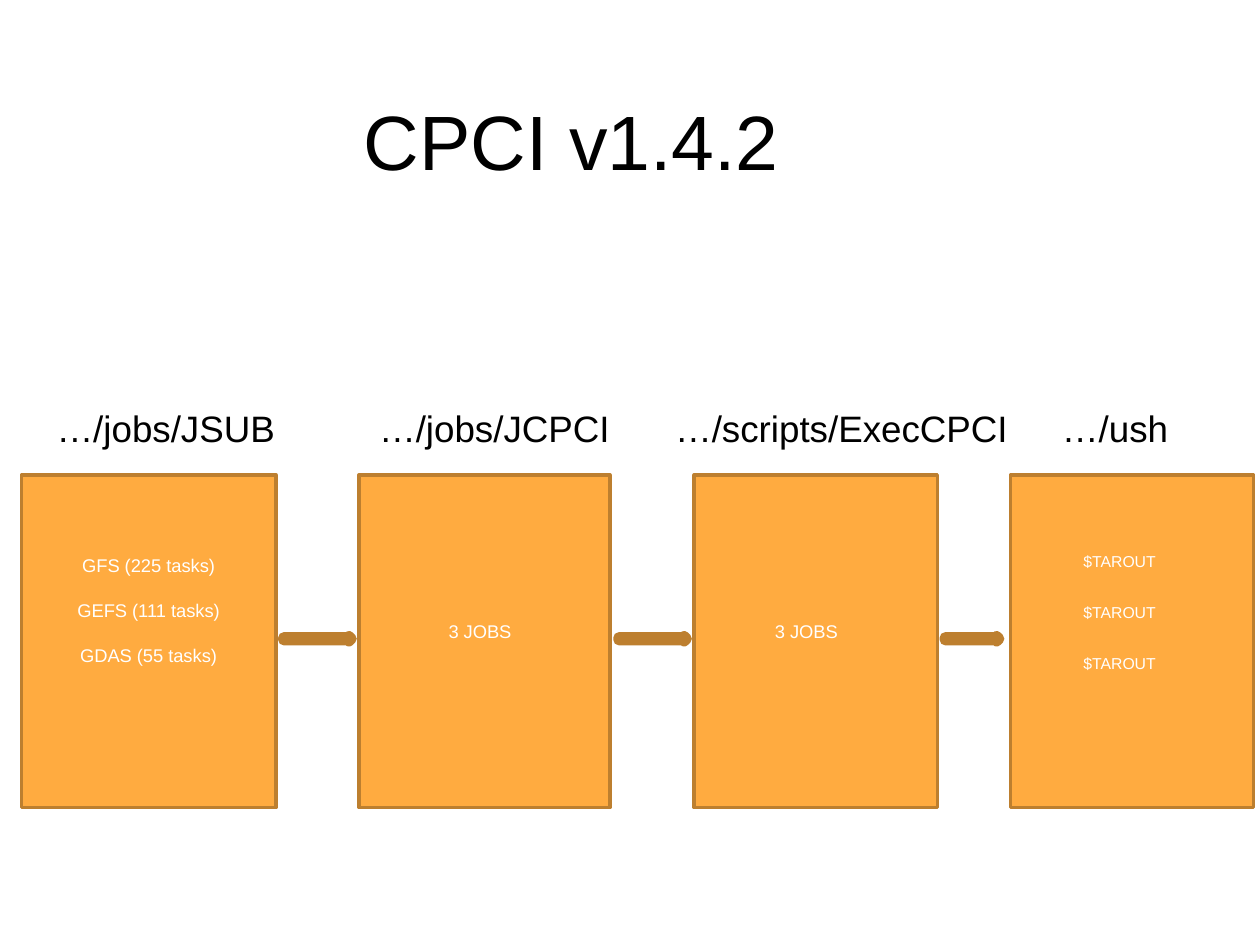
from dataclasses import dataclass

from pptx import Presentation
from pptx import util as u
from pptx.dml.color import RGBColor
from pptx.enum import shapes, text


@dataclass
class Theme:
    font: str = "Arial"
    orange: RGBColor = RGBColor(0xFF, 0xAB, 0x40)
    brown: RGBColor = RGBColor(0xBD, 0x7F, 0x2F)
    black: RGBColor = RGBColor(0, 0, 0)
    white: RGBColor = RGBColor(255, 255, 255)
    title: float = 44
    heading: float = 21
    body: float = 10.5
    small: float = 9


theme = Theme()
presentation = Presentation()
presentation.slide_width = u.Inches(10)
presentation.slide_height = u.Inches(7.5)
slide = presentation.slides.add_slide(presentation.slide_layouts[6])


def add_block(kind, left, top, width, height, line_width):
    shape = slide.shapes.add_shape(
        kind, u.Inches(left), u.Inches(top), u.Inches(width), u.Inches(height)
    )
    shape.shadow.inherit = False
    shape.fill.solid()
    shape.fill.fore_color.rgb = theme.orange
    shape.line.color.rgb = theme.brown
    shape.line.width = u.Pt(line_width)
    return shape


def add_label(wording, left, top, width, height, size, color):
    label = slide.shapes.add_textbox(
        u.Inches(left), u.Inches(top), u.Inches(width), u.Inches(height)
    )
    frame = label.text_frame
    frame.text = wording
    frame.word_wrap = False
    frame.auto_size = text.MSO_AUTO_SIZE.SHAPE_TO_FIT_TEXT
    font = frame.paragraphs[0].runs[0].font
    font.name = theme.font
    font.size = u.Pt(size)
    font.color.rgb = color
    return label


add_label("CPCI v1.4.2", 2.79, 0.69, 3.53, 0.84, theme.title, theme.black)

stages = [
    ("…/jobs/JSUB", 0.35, 1.95, 0.17, 2.02),
    ("…/jobs/JCPCI", 2.91, 2.05, 2.85, 1.99),
    ("…/scripts/ExecCPCI", 5.26, 2.87, 5.51, 1.93),
    ("…/ush", 8.33, 1.05, 8.02, 1.93),
]
boxes = []
for heading, heading_left, heading_width, box_left, box_width in stages:
    boxes.append(add_block(shapes.MSO_SHAPE.RECTANGLE, box_left, 3.77, box_width, 2.64, 2))
    add_label(heading, heading_left, 3.17, heading_width, 0.45, theme.heading, theme.black)

for left, width in [(2.25, 0.54), (4.91, 0.54), (7.5, 0.43)]:
    add_block(shapes.MSO_SHAPE.RIGHT_ARROW, left, 5.05, width, 0.04, 6)

frame = boxes[0].text_frame
frame.text = "GFS (225 tasks)\nGEFS (111 tasks)\nGDAS (55 tasks)"
frame.vertical_anchor = text.MSO_ANCHOR.TOP
frame.margin_top = u.Inches(0.63)
for paragraph in frame.paragraphs:
    paragraph.alignment = text.PP_ALIGN.CENTER
    paragraph.space_after = u.Pt(13)
    font = paragraph.runs[0].font
    font.name = theme.font
    font.size = u.Pt(theme.body)
    font.color.rgb = theme.white

for left in (3.14, 5.73):
    label = add_label("3 JOBS", left, 4.87, 1.5, 0.28, theme.body, theme.white)
    label.text_frame.word_wrap = True
    label.text_frame.margin_left = u.Inches(0.42)

for row in range(3):
    add_label("$TAROUT", 8.5, 4.33 + row * 0.405, 0.79, 0.25, theme.small, theme.white)

presentation.save("out.pptx")
